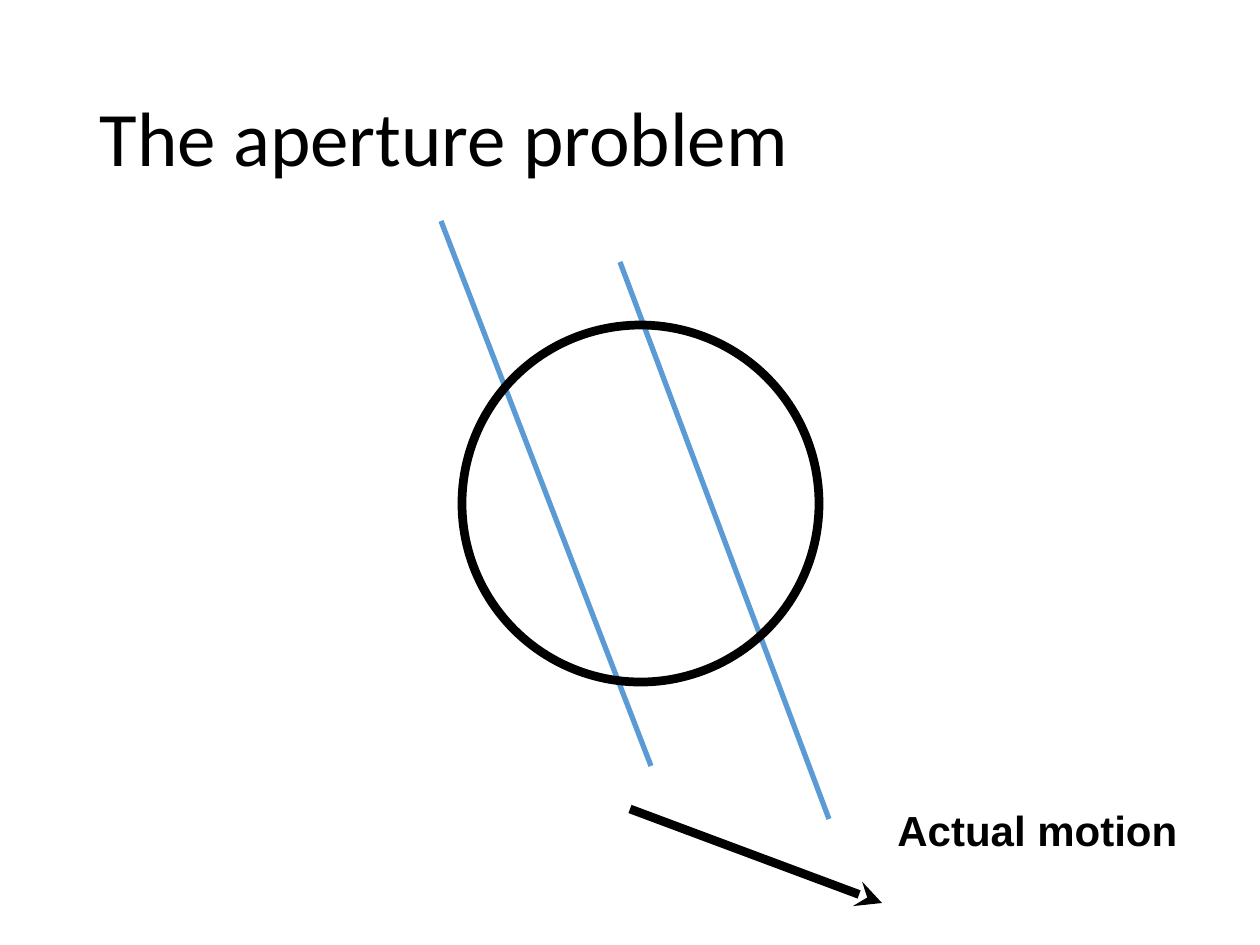
"""Build the aperture problem slide."""
import dataclasses
import typing

import lxml.etree
import pptx
import pptx.dml.color
import pptx.enum.shapes
import pptx.enum.text
import pptx.oxml.ns
import pptx.util

EMU_PER_PX = 914400 / 126
COLORS = {"ink": "000000", "edge": "5B9BD5", "paper": "FFFFFF"}


@dataclasses.dataclass
class Stroke:
    start: tuple[int, int]
    end: tuple[int, int]
    color: str
    width: int
    arrow: bool = False


MOVING_EDGES = [
    Stroke((441, 221), (651, 766), "edge", 3),
    Stroke((620, 262), (829, 819), "edge", 3),
]
MOTION_ARROW = Stroke((630, 809), (882, 903), "ink", 5, arrow=True)


def px(length: int) -> pptx.util.Emu:
    return pptx.util.Emu(round(length * EMU_PER_PX))


def color(name: str) -> pptx.dml.color.RGBColor:
    return pptx.dml.color.RGBColor.from_string(COLORS[name])


def draw_stroke(page: typing.Any, stroke: Stroke) -> None:
    line = page.shapes.add_connector(
        pptx.enum.shapes.MSO_CONNECTOR.STRAIGHT,
        *map(px, stroke.start + stroke.end),
    )
    line.line.color.rgb = color(stroke.color)
    line.line.width = pptx.util.Pt(stroke.width)
    if stroke.arrow:
        outline = line.line._get_or_add_ln()
        tail = lxml.etree.SubElement(outline, pptx.oxml.ns.qn("a:tailEnd"))
        tail.set("type", "stealth")
    lxml.etree.SubElement(line._element.spPr, pptx.oxml.ns.qn("a:effectLst"))


def draw_aperture(page: typing.Any, left: int, top: int, size: int) -> None:
    circle = page.shapes.add_shape(
        pptx.enum.shapes.MSO_SHAPE.OVAL, px(left), px(top), px(size), px(size)
    )
    circle.shadow.inherit = False
    circle.fill.background()
    circle.line.color.rgb = color("ink")
    circle.line.width = pptx.util.Pt(5)


def write(box: typing.Any, text: str, font: str, size: int, bold: bool) -> None:
    para = box.text_frame.paragraphs[0]
    para.alignment = pptx.enum.text.PP_ALIGN.LEFT
    span = para.add_run()
    span.text = text
    span.font.name = font
    span.font.size = pptx.util.Pt(size)
    span.font.bold = bold
    span.font.color.rgb = color("ink")


def main() -> None:
    deck = pptx.Presentation()
    deck.slide_width, deck.slide_height = px(1260), px(945)
    page = deck.slides.add_slide(deck.slide_layouts[5])
    page.background.fill.solid()
    page.background.fill.fore_color.rgb = color("paper")

    title = page.shapes.title
    title.left, title.top, title.width, title.height = map(px, (87, 50, 1086, 183))
    title.text_frame.vertical_anchor = pptx.enum.text.MSO_ANCHOR.MIDDLE
    write(title, "The aperture problem", "Calibri", 44, False)
    title.text_frame.paragraphs[0].line_spacing = 0.9

    for edge in MOVING_EDGES:
        draw_stroke(page, edge)
    draw_aperture(page, 462, 325, 357)
    draw_stroke(page, MOTION_ARROW)

    label = page.shapes.add_textbox(*map(px, (885, 798, 305, 63)))
    label.text_frame.word_wrap = False
    label.text_frame.auto_size = pptx.enum.text.MSO_AUTO_SIZE.SHAPE_TO_FIT_TEXT
    write(label, "Actual motion", "Arial", 24, True)

    deck.save("out.pptx")


if __name__ == "__main__":
    main()
